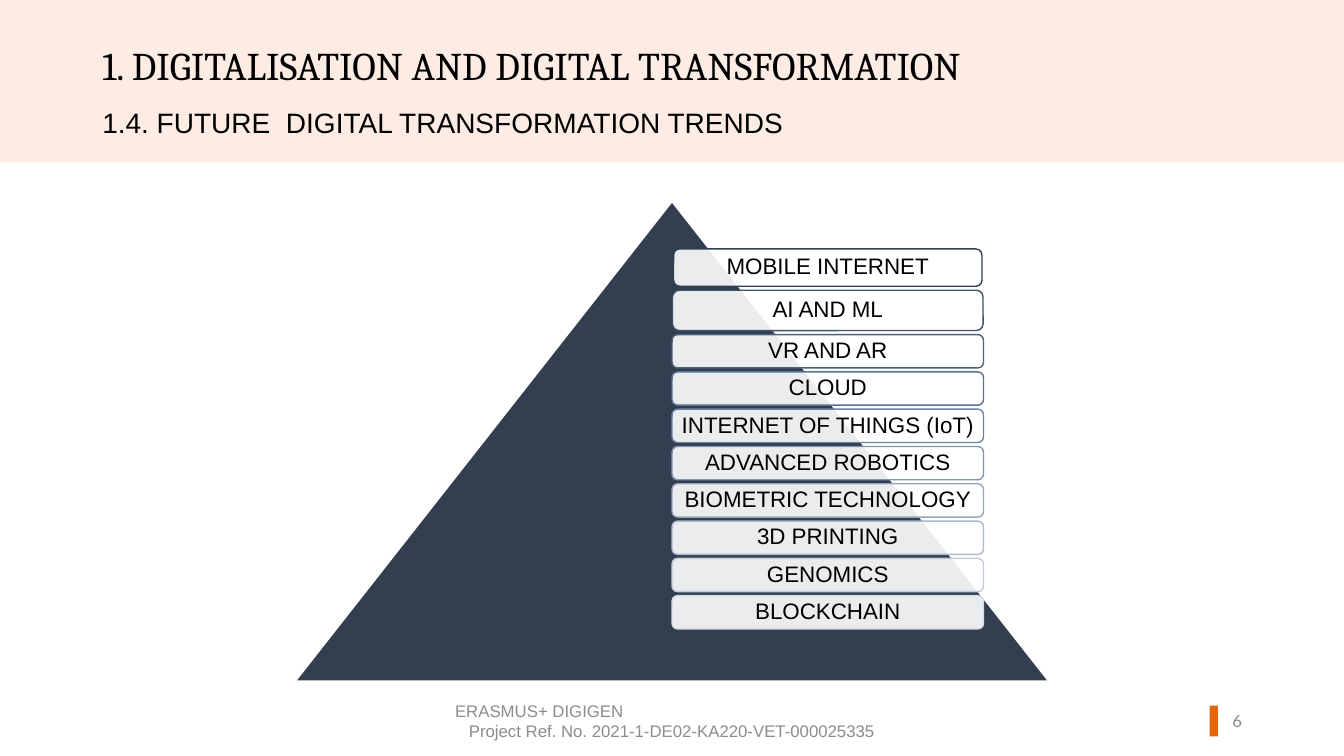
import pptx
import pptx.util
import pptx.dml.color
import pptx.enum.shapes
import pptx.enum.text
import pptx.oxml.ns
import lxml.etree

Pt = pptx.util.Pt
SHAPE = pptx.enum.shapes.MSO_SHAPE
ALIGN = pptx.enum.text.PP_ALIGN
ANCHOR = pptx.enum.text.MSO_ANCHOR

THEME = {
    "band": "FDECE3", "accent": "E86507", "pyramid": "333F50",
    "white": "FFFFFF", "ink": "000000", "muted": "8C8C8C",
    "title": 28, "subtitle": 20, "label": 16, "footer": 12,
    "heading_font": "Cambria", "body_font": "Arial", "number_font": "Lato",
}

TRENDS = [
    ("MOBILE INTERNET", 220.3, 26.64, "333F50"),
    ("AI AND ML", 221.8, 28.8, "405065"),
    ("VR AND AR", 222.5, 23.76, "4E607A"),
    ("CLOUD", 222.5, 23.76, "5B7190"),
    ("INTERNET OF THINGS (IoT)", 222.5, 23.76, "6C82A2"),
    ("ADVANCED ROBOTICS", 222.5, 23.76, "8194AF"),
    ("BIOMETRIC TECHNOLOGY", 222.5, 23.76, "96A6BD"),
    ("3D PRINTING", 222.5, 23.76, "ACB8CA"),
    ("GENOMICS", 222.5, 23.76, "C1CAD8"),
    ("BLOCKCHAIN", 222.5, 23.76, "D6DCE5"),
]


def add_block(kind, left, top, width, height, fill, line=None):
    block = page.shapes.add_shape(kind, Pt(left), Pt(top), Pt(width), Pt(height))
    block.shadow.inherit = False
    block.fill.solid()
    block.fill.fore_color.rgb = pptx.dml.color.RGBColor.from_string(THEME[fill])
    if line:
        block.line.color.rgb = pptx.dml.color.RGBColor.from_string(line)
        block.line.width = Pt(1)
    else:
        block.line.fill.background()
    return block


def write(box, lines, font, size, color, anchor, spacing=1.0):
    frame = box.text_frame
    frame.word_wrap = True
    frame.vertical_anchor = anchor
    for index, (text, align) in enumerate(lines):
        para = frame.add_paragraph() if index else frame.paragraphs[0]
        para.text = text
        para.alignment = align
        para.line_spacing = spacing
        para.font.name = THEME[font]
        para.font.size = Pt(THEME[size])
        para.font.color.rgb = pptx.dml.color.RGBColor.from_string(THEME[color])


deck = pptx.Presentation()
deck.slide_width = Pt(960)
deck.slide_height = Pt(540)
page = deck.slides.add_slide(deck.slide_layouts[6])

add_block(SHAPE.RECTANGLE, 0, 0, 960, 116, "band")
add_block(SHAPE.RECTANGLE, 864, 504, 6, 22, "accent")
add_block(SHAPE.ISOSCELES_TRIANGLE, 211, 144, 538, 342.5, "pyramid", THEME["white"])

trend_center = 591.3
trend_gap = 2.88
trend_top = 177.84
for name, width, height, outline in TRENDS:
    label = add_block(SHAPE.ROUNDED_RECTANGLE, trend_center - width / 2, trend_top,
                      width, height, "white", outline)
    fill_color = label.fill._xPr.find(".//" + pptx.oxml.ns.qn("a:srgbClr"))
    lxml.etree.SubElement(fill_color, pptx.oxml.ns.qn("a:alpha"), val="90000")
    write(label, [(name, ALIGN.CENTER)], "body_font", "label", "ink", ANCHOR.MIDDLE, 0.9)
    frame = label.text_frame
    frame.margin_left = frame.margin_right = Pt(4)
    frame.margin_top = frame.margin_bottom = Pt(0)
    trend_top += height + trend_gap

footer = page.shapes.add_textbox(Pt(318), Pt(500.4), Pt(324), Pt(28.8))
write(footer, [("ERASMUS+ DIGIGEN", ALIGN.LEFT),
               ("Project Ref. No. 2021-1-DE02-KA220-VET-000025335", ALIGN.CENTER)],
      "body_font", "footer", "muted", ANCHOR.MIDDLE)

number = page.shapes.add_textbox(Pt(847.5), Pt(500.4), Pt(46.8), Pt(28.8))
write(number, [("6", ALIGN.RIGHT)], "number_font", "footer", "muted", ANCHOR.MIDDLE)

title = page.shapes.add_textbox(Pt(66), Pt(29.5), Pt(715), Pt(61))
write(title, [("1. DIGITALISATION AND DIGITAL TRANSFORMATION", ALIGN.LEFT)],
      "heading_font", "title", "ink", ANCHOR.TOP, 0.9)

subtitle = page.shapes.add_textbox(Pt(66), Pt(74.2), Pt(781), Pt(61))
write(subtitle, [("1.4. FUTURE  DIGITAL TRANSFORMATION TRENDS", ALIGN.LEFT)],
      "body_font", "subtitle", "ink", ANCHOR.TOP, 0.9)

deck.save("out.pptx")
